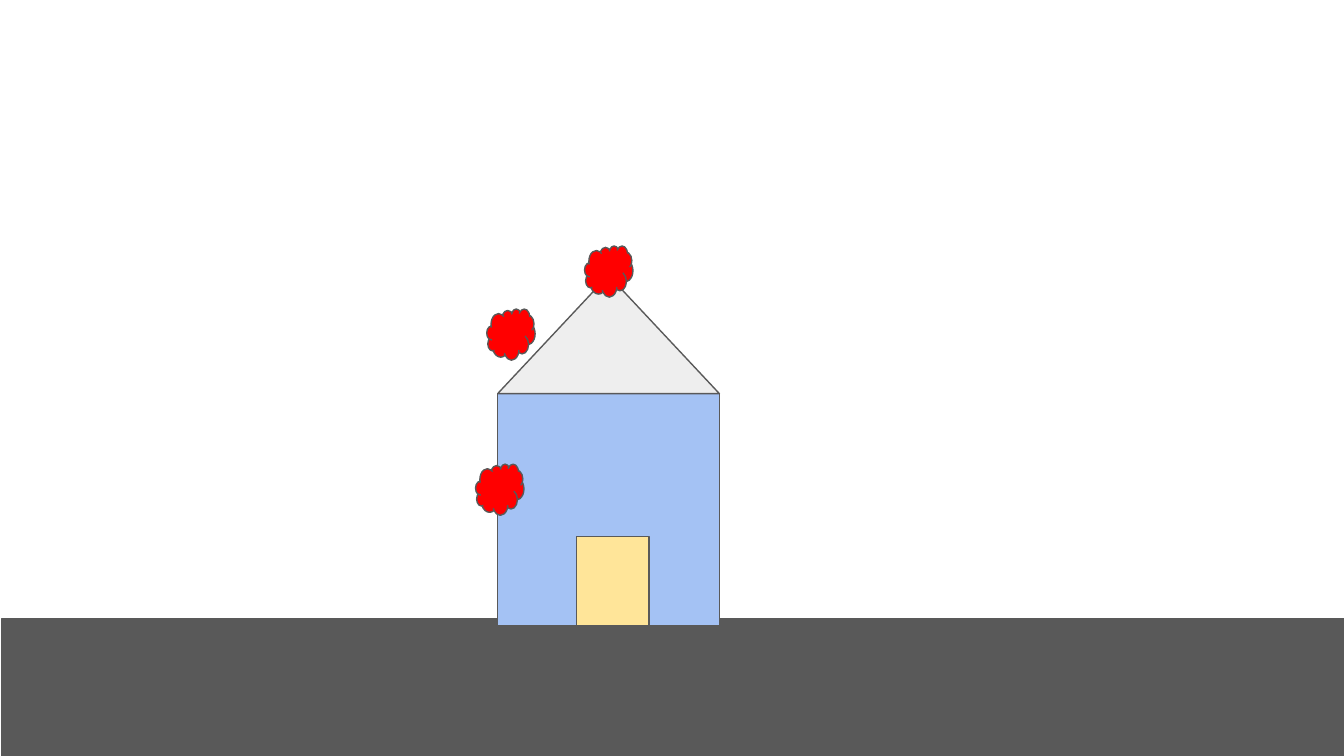
from pptx import Presentation
from pptx.dml.color import RGBColor
from pptx.enum.shapes import MSO_SHAPE as Kind
from pptx.util import Pt

GRAY = RGBColor(0x59, 0x59, 0x59)
BLUE = RGBColor(0xA4, 0xC2, 0xF4)
PALE = RGBColor(0xEE, 0xEE, 0xEE)
CREAM = RGBColor(0xFF, 0xE5, 0x99)
RED = RGBColor(0xFF, 0x00, 0x00)


class Scene:
    """Draws outlined shapes on one slide, with lengths in points."""

    edge = GRAY
    weight = 0.75
    puff = (25.9, 27.4)

    def __init__(self, slide):
        self.slide = slide

    def shape(self, kind, left, top, width, height, fill):
        item = self.slide.shapes.add_shape(
            kind, Pt(left), Pt(top), Pt(width), Pt(height))
        item.shadow.inherit = False
        item.fill.solid()
        item.fill.fore_color.rgb = fill
        item.line.color.rgb = self.edge
        item.line.width = Pt(self.weight)
        return item

    def ground(self, left, top, width, height):
        return self.shape(Kind.FLOWCHART_PROCESS, left, top, width, height, GRAY)

    def block(self, left, top, width, height, fill):
        return self.shape(Kind.RECTANGLE, left, top, width, height, fill)

    def roof(self, left, base, width, height):
        return self.shape(
            Kind.ISOSCELES_TRIANGLE, left, base - height, width, height, PALE)

    def cloud(self, left, top):
        return self.shape(Kind.CLOUD, left, top, *self.puff, RED)


def main():
    deck = Presentation()
    deck.slide_width, deck.slide_height = Pt(720), Pt(405)
    scene = Scene(deck.slides.add_slide(deck.slide_layouts[6]))

    left, eaves, width, floor = 266.6, 210.9, 118.8, 335.5
    door = 48.2
    scene.ground(0.7, 331.6, 720, 73.4)
    scene.block(left, eaves, width, floor - eaves, BLUE)
    scene.roof(left, eaves, width, 63.4)
    scene.block(308.9, floor - door, 38.9, door, CREAM)
    for spot in ((260.8, 165.5), (313.2, 131.7), (254.8, 248.6)):
        scene.cloud(*spot)

    deck.save("out.pptx")


if __name__ == "__main__":
    main()
